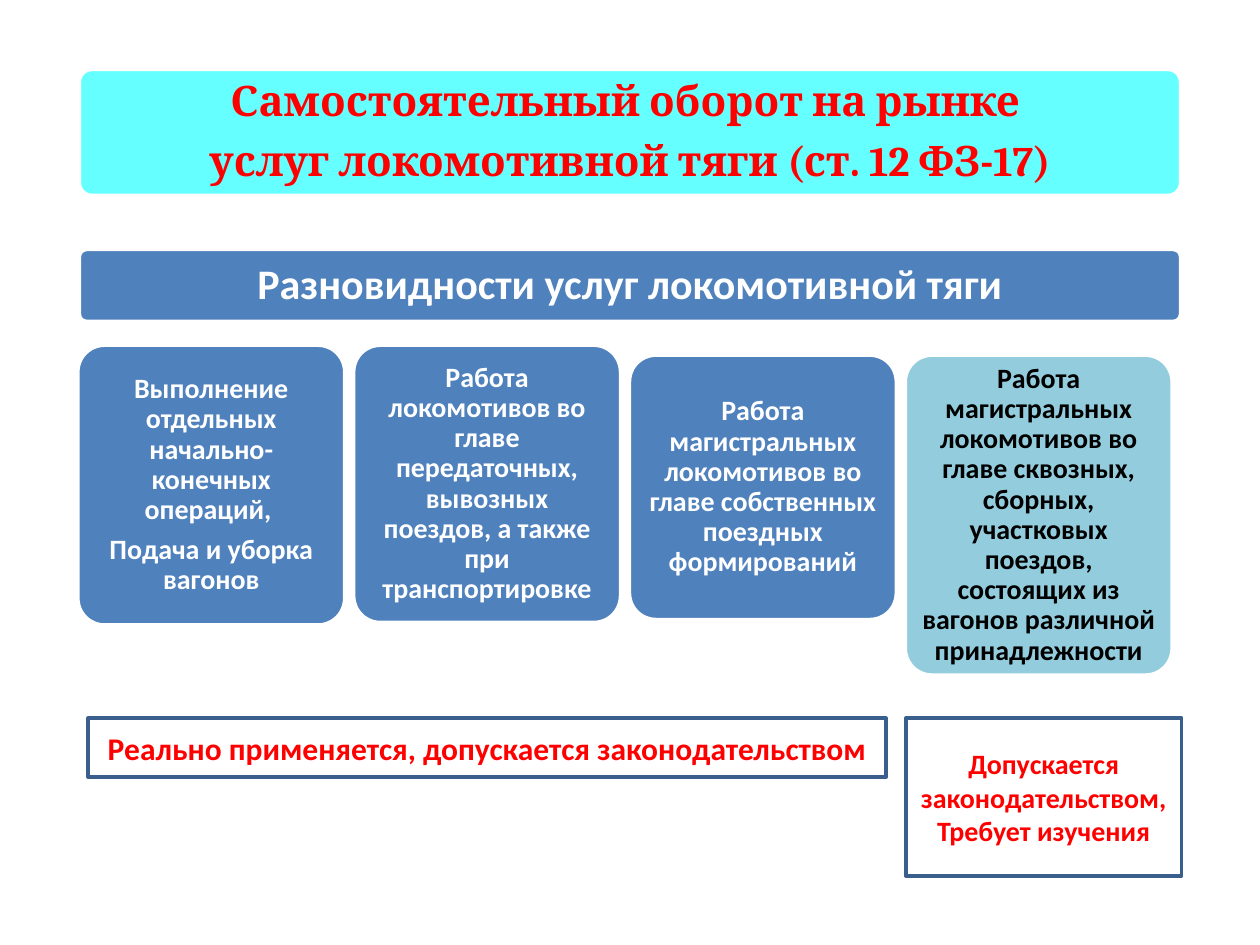
import pptx
import pptx.util
import pptx.dml.color
import pptx.enum.shapes
import pptx.enum.text

Cm = pptx.util.Cm
Pt = pptx.util.Pt
RGBColor = pptx.dml.color.RGBColor
SHAPES = pptx.enum.shapes.MSO_SHAPE

AQUA = RGBColor(0x66, 0xFF, 0xFF)
BLUE = RGBColor(0x4F, 0x81, 0xBD)
LIGHT_BLUE = RGBColor(0x93, 0xCD, 0xDD)
DARK_BLUE = RGBColor(0x3A, 0x5F, 0x8C)
RED = RGBColor(0xFF, 0x00, 0x00)
WHITE = RGBColor(0xFF, 0xFF, 0xFF)
BLACK = RGBColor(0x00, 0x00, 0x00)

CARD_LEFT, CARD_STEP, CARD_WIDTH = 1.57, 5.56, 5.38
CARDS = [
    (6.96, 5.64, BLUE, WHITE,
     ["Выполнение отдельных начально-конечных операций, ", "Подача и уборка вагонов"]),
    (6.96, 5.59, BLUE, WHITE,
     ["Работа локомотивов во главе передаточных, вывозных поездов, а также при транспортировке"]),
    (7.16, 5.33, BLUE, WHITE,
     ["Работа магистральных локомотивов во главе собственных поездных формирований"]),
    (7.16, 6.45, LIGHT_BLUE, BLACK,
     ["Работа магистральных локомотивов во главе сквозных, сборных, участковых поездов, "
      "состоящих из вагонов различной принадлежности"]),
]
NOTES = [
    (1.78, 16.08, 1.19, 18, "Реально применяется, допускается законодательством"),
    (18.26, 5.56, 3.18, 16, "Допускается законодательством, Требует изучения"),
]


def apply(target, values):
    for name, value in values.items():
        setattr(target, name, value)


class SlideBuilder:
    body_font = "Calibri"
    title_font = "Cambria"
    line_width = Pt(2)
    tight = {"line_spacing": 0.9}

    def __init__(self, presentation):
        self.slide = presentation.slides.add_slide(presentation.slide_layouts[5])

    def fill_text(self, shape, lines, size, color, font=body_font, inset=None, spacing=None):
        frame = shape.text_frame
        apply(frame, {"word_wrap": True,
                      "auto_size": pptx.enum.text.MSO_AUTO_SIZE.NONE,
                      "vertical_anchor": pptx.enum.text.MSO_ANCHOR.MIDDLE})
        if inset is not None:
            sides = ("left", "top", "right", "bottom")
            apply(frame, {f"margin_{side}": Cm(inset) for side in sides})
        frame.text = "\n".join(lines)
        for paragraph in frame.paragraphs:
            paragraph.alignment = pptx.enum.text.PP_ALIGN.CENTER
            if spacing:
                apply(paragraph, spacing)
                paragraph.space_after = Pt(size * 0.35)
            apply(paragraph.runs[0].font, {"name": font, "size": Pt(size), "bold": True})
            paragraph.runs[0].font.color.rgb = color

    def box(self, kind, left, top, width, height, fill, line):
        shape = self.slide.shapes.add_shape(kind, Cm(left), Cm(top), Cm(width), Cm(height))
        shape.shadow.inherit = False
        if fill is None:
            shape.fill.background()
        else:
            shape.fill.solid()
            shape.fill.fore_color.rgb = fill
        shape.line.color.rgb = line
        shape.line.width = self.line_width
        return shape

    def panel(self, left, top, width, height, fill):
        shape = self.box(SHAPES.ROUNDED_RECTANGLE, left, top, width, height, fill, WHITE)
        shape.adjustments[0] = 0.1
        return shape

    def title(self, left, top, width, height, lines):
        panel = self.panel(left, top, width, height, AQUA)
        title = self.slide.shapes.title
        panel.element.addnext(title.element)
        apply(title, {"left": Cm(left + 0.07), "top": Cm(top + 0.07),
                      "width": Cm(width - 0.14), "height": Cm(height - 0.14)})
        self.fill_text(title, lines, 24, RED, self.title_font, 0.25, self.tight)

    def banner(self, left, top, width, height, text):
        shape = self.panel(left, top, width, height, BLUE)
        self.fill_text(shape, [text], 24, WHITE, inset=0.25, spacing=self.tight)

    def card(self, left, top, width, height, fill, color, lines):
        shape = self.panel(left, top, width, height, fill)
        self.fill_text(shape, lines, 16, color, inset=0.17, spacing=self.tight)

    def note(self, left, top, width, height, size, text):
        shape = self.box(SHAPES.RECTANGLE, left, top, width, height, None, DARK_BLUE)
        self.fill_text(shape, [text], size, RED)


def main():
    presentation = pptx.Presentation()
    apply(presentation, {"slide_width": Cm(25.4), "slide_height": Cm(19.05)})
    builder = SlideBuilder(presentation)
    builder.title(1.6, 1.4, 22.2, 2.54,
                  ["Самостоятельный оборот на рынке ", "услуг локомотивной тяги (ст. 12 ФЗ-17)"])
    builder.banner(1.6, 5.03, 22.2, 1.45, "Разновидности услуг локомотивной тяги")
    for index, (top, height, fill, color, lines) in enumerate(CARDS):
        left = CARD_LEFT + index * CARD_STEP
        builder.card(left, top, CARD_WIDTH, height, fill, color, lines)
    for left, width, height, size, text in NOTES:
        builder.note(left, 14.48, width, height, size, text)
    presentation.save("out.pptx")


if __name__ == "__main__":
    main()
